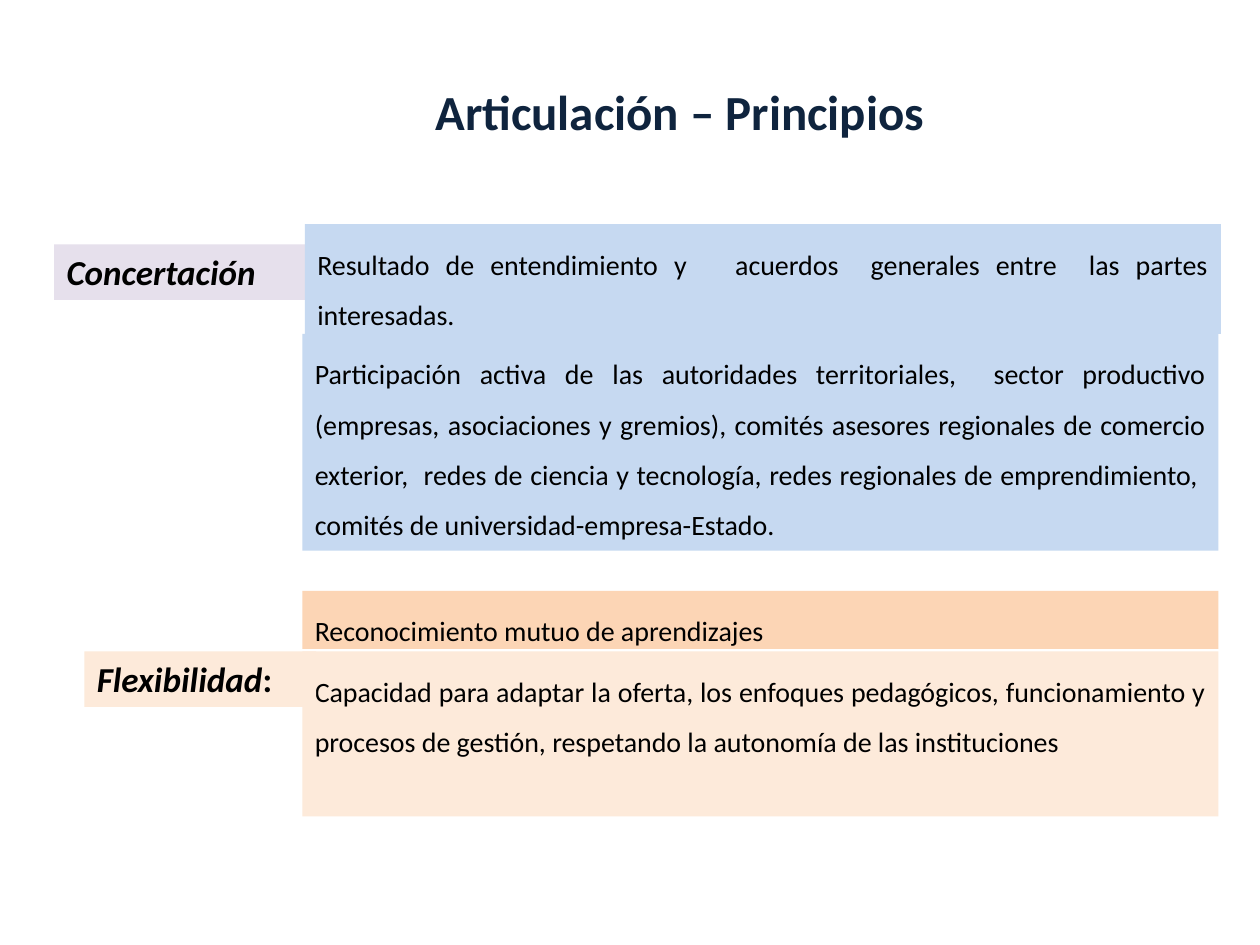
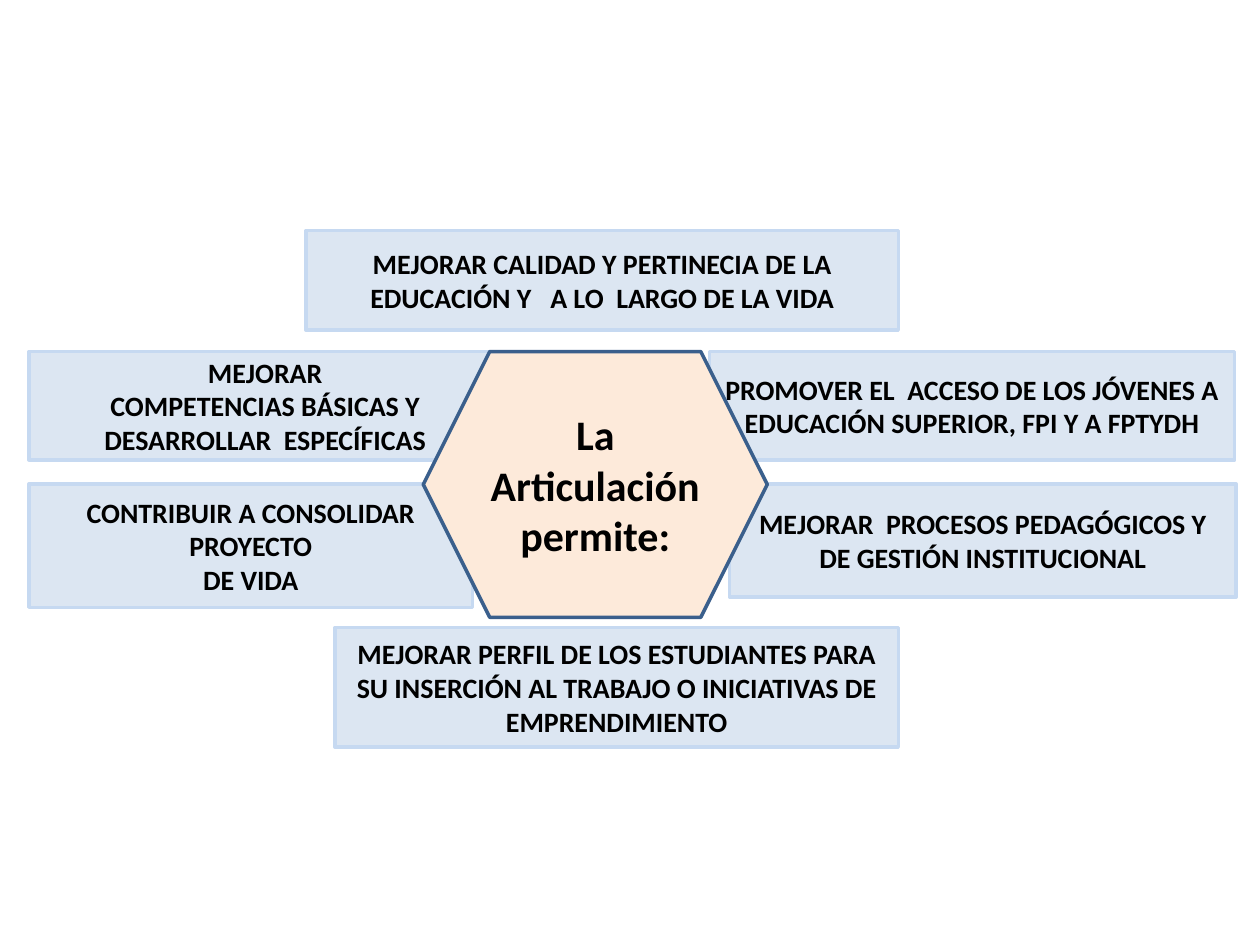
from pptx import Presentation
from pptx.dml.color import RGBColor
from pptx.enum.shapes import MSO_SHAPE as Shape
from pptx.enum.text import MSO_ANCHOR as Anchor, PP_ALIGN as Align
from pptx.util import Inches, Pt

BLACK = RGBColor(0x00, 0x00, 0x00)
NAVY = RGBColor(0x0F, 0x24, 0x3E)
SKY = RGBColor(0xC6, 0xD9, 0xF1)
PALE = RGBColor(0xDC, 0xE6, 0xF2)
LILAC = RGBColor(0xE6, 0xE0, 0xEC)
PEACH = RGBColor(0xFC, 0xD5, 0xB5)
CREAM = RGBColor(0xFD, 0xEA, 0xDA)
STEEL = RGBColor(0x3A, 0x5F, 0x8C)

TITLE = {"size": Pt(28), "bold": True, "color": NAVY}
LABEL = {"size": Pt(20), "bold": True, "italic": True}
BODY = {"size": Pt(16)}
STRONG = {"size": Pt(16), "bold": True}
CORE = {"size": Pt(24), "bold": True}


def style(font, look):
    """Apply a dict of format values to a font."""
    for key, value in {"name": "Calibri", "color": BLACK, **look}.items():
        if key == "color":
            font.color.rgb = value
        else:
            setattr(font, key, value)


def write(shape, text, look, align, gap=1.0, anchor=Anchor.TOP):
    """Write one paragraph for each line of text."""
    frame = shape.text_frame
    frame.word_wrap = True
    frame.vertical_anchor = anchor
    for i, line in enumerate(text.split("\n")):
        para = frame.paragraphs[0] if i == 0 else frame.add_paragraph()
        para.alignment = align
        para.line_spacing = gap
        run = para.add_run()
        run.text = line
        style(run.font, look)
    return frame


def block(slide, box, fill, edge=None, kind=Shape.RECTANGLE):
    """Draw a flat filled shape, with an outline if edge is given."""
    shape = slide.shapes.add_shape(kind, *map(Inches, box))
    shape.shadow.inherit = False
    shape.fill.solid()
    shape.fill.fore_color.rgb = fill
    if edge is None:
        shape.line.fill.background()
    else:
        shape.line.color.rgb = edge
        shape.line.width = Pt(2)
    return shape


def title(slide, box, text):
    shape = slide.shapes.add_textbox(*map(Inches, box))
    write(shape, text, TITLE, Align.CENTER).word_wrap = False


def label(slide, box, text, fill, tail=""):
    """Name of a principle, with an upright tail."""
    frame = write(block(slide, box, fill), text, LABEL, Align.LEFT)
    if tail:
        run = frame.paragraphs[0].add_run()
        run.text = tail
        style(run.font, {**LABEL, "italic": False})


def panel(slide, box, text, fill, align=Align.JUSTIFY):
    write(block(slide, box, fill), text, BODY, align, gap=1.5)


def accord(slide, left, top, width):
    """Label and two stacked panels about agreement."""
    panel(slide, (left, top + 0.87, width, 1.72),
          "Participación activa de las autoridades territoriales,  sector productivo "
          "(empresas, asociaciones y gremios), comités asesores regionales de comercio "
          "exterior,  redes de ciencia y tecnología, redes regionales de emprendimiento,  "
          "comités de universidad-empresa-Estado.", SKY)
    label(slide, (left - 1.97, top + 0.16, 2.08, 0.44), "Concertación", LILAC)
    panel(slide, (left + 0.02, top, width, 0.87),
          "Resultado de entendimiento y   acuerdos  generales entre  las partes "
          "interesadas.", SKY)


def flex(slide, left, top, width):
    """Label and two stacked panels about flexibility."""
    panel(slide, (left, top, width, 0.46),
          "Reconocimiento mutuo de aprendizajes", PEACH, Align.LEFT)
    panel(slide, (left, top + 0.48, width, 1.31),
          "Capacidad para adaptar la oferta, los enfoques pedagógicos, funcionamiento y "
          "procesos de gestión, respetando la autonomía de las instituciones", CREAM)
    label(slide, (left - 1.73, top + 0.48, 1.84, 0.44), "Flexibilidad", CREAM, ":")


def wheel(slide, left, top):
    """Six aims around a central hexagon."""
    aims = [  # offset from the corner, size, text
        (0, 2.01, 3.52, 0.98, "CONTRIBUIR A CONSOLIDAR PROYECTO\nDE VIDA"),
        (2.2, 0, 4.7, 0.79,
         "MEJORAR CALIDAD Y PERTINECIA DE LA EDUCACIÓN Y   A LO  LARGO DE LA VIDA"),
        (0, 0.96, 3.75, 0.86,
         "MEJORAR\nCOMPETENCIAS BÁSICAS Y DESARROLLAR  ESPECÍFICAS"),
        (2.43, 3.15, 4.47, 0.95,
         "MEJORAR PERFIL DE LOS ESTUDIANTES PARA SU INSERCIÓN AL TRABAJO "
         "O INICIATIVAS DE EMPRENDIMIENTO"),
        (5.56, 2.01, 4.02, 0.9,
         "MEJORAR  PROCESOS PEDAGÓGICOS Y\nDE GESTIÓN INSTITUCIONAL"),
        (5.4, 0.96, 4.17, 0.86,
         "PROMOVER EL  ACCESO DE LOS JÓVENES A EDUCACIÓN SUPERIOR, FPI Y A FPTYDH"),
    ]
    for x, y, width, height, text in aims:
        aim = block(slide, (left + x, top + y, width, height), PALE, SKY)
        write(aim, text, STRONG, Align.CENTER, anchor=Anchor.MIDDLE)
    core = block(slide, (left + 3.13, top + 0.96, 2.73, 2.11), CREAM, STEEL, Shape.HEXAGON)
    write(core, "La Articulación permite:", CORE, Align.CENTER, anchor=Anchor.MIDDLE)


def main():
    deck = Presentation()
    deck.slide_width, deck.slide_height = Inches(10), Inches(7.5)
    blank = deck.slide_layouts[6]

    # Principles
    slide = deck.slides.add_slide(blank)
    flex(slide, 2.4, 4.69, 7.27)
    accord(slide, 2.4, 1.78, 7.27)
    title(slide, (2.99, 0.6, 4.81, 0.57), "Articulación – Principios")

    # Aims
    wheel(deck.slides.add_slide(blank), 0.23, 1.83)

    deck.save("out.pptx")


if __name__ == "__main__":
    main()
